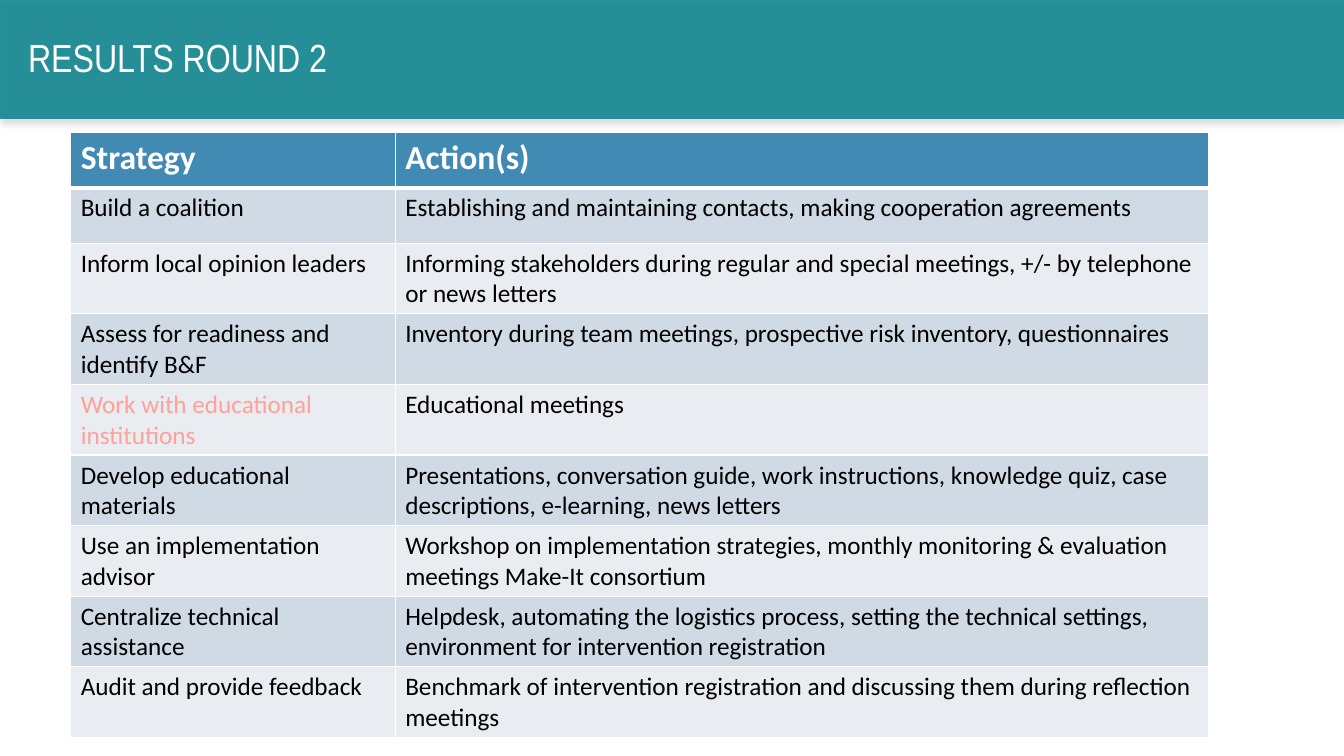
from lxml import etree
from pptx import Presentation
from pptx.dml.color import RGBColor
from pptx.enum.shapes import MSO_SHAPE
from pptx.enum.text import MSO_ANCHOR
from pptx.oxml.ns import qn
from pptx.util import Pt

RECT = MSO_SHAPE.RECTANGLE
MIDDLE = MSO_ANCHOR.MIDDLE

WIDTH, HEIGHT = 960, 540
COLUMNS = [231.8, 581]
HEADER_HEIGHT, ROW_HEIGHT = 39.6, 50.4
HEADER_FILL = "418AB3"
BAND_FILLS = ["CFDAE5", "E9EDF2"]
HIGHLIGHT = "Work with educational institutions"

TITLE_FONT = {"name": "Arial Narrow", "size": Pt(28), "bold": False}
HEADER_FONT = {"name": "Calibri", "size": Pt(24), "bold": True}
BODY_FONT = {"name": "Calibri", "size": Pt(18), "bold": False}

ROWS = [
    ("Strategy", "Action(s)"),
    ("Build a coalition",
     "Establishing and maintaining contacts, making cooperation agreements"),
    ("Inform local opinion leaders",
     "Informing stakeholders during regular and special meetings, +/- by telephone or news letters"),
    ("Assess for readiness and identify B&F",
     "Inventory during team meetings, prospective risk inventory, questionnaires"),
    (HIGHLIGHT, "Educational meetings"),
    ("Develop educational materials",
     "Presentations, conversation guide, work instructions, knowledge quiz, "
     "case descriptions, e-learning, news letters"),
    ("Use an implementation advisor",
     "Workshop on implementation strategies, monthly monitoring & evaluation "
     "meetings Make-It consortium"),
    ("Centralize technical assistance",
     "Helpdesk, automating the logistics process, setting the technical settings, "
     "environment for intervention registration"),
    ("Audit and provide feedback",
     "Benchmark of intervention registration and discussing them during reflection meetings"),
]


def rgb(value):
    return RGBColor.from_string(value)


def add_element(parent, tag, **attrs):
    child = etree.SubElement(parent, qn(tag))
    for name, value in attrs.items():
        child.set(name, str(value))
    return child


def fill_solid(fill, color):
    fill.solid()
    fill.fore_color.rgb = rgb(color)


def write(tf, text, font, color):
    p = tf.paragraphs[0]
    r = p.add_run()
    r.text = text
    for name, value in font.items():
        setattr(r.font, name, value)
    r.font.color.rgb = rgb(color)
    return p


def add_banner(s, height, color):
    sp = s.shapes.add_shape(RECT, 0, 0, Pt(WIDTH), Pt(height))
    fill_solid(sp.fill, color)
    sp.line.fill.background()
    sp.shadow.inherit = False
    spPr = sp.element.spPr
    add_element(spPr.find(qn("a:solidFill"))[0], "a:alpha", val=90000)
    shadow = add_element(spPr.find(qn("a:effectLst")), "a:outerShdw",
                         blurRad=Pt(4), dist=Pt(3), dir=5400000,
                         algn="t", rotWithShape=0)
    shadow_color = add_element(shadow, "a:srgbClr", val="A6A6A6")
    add_element(shadow_color, "a:alpha", val=40000)


def add_title(s, text, left, top, width, height):
    sp = s.shapes.add_textbox(Pt(left), Pt(top), Pt(width), Pt(height))
    tf = sp.text_frame
    tf.word_wrap = True
    tf.vertical_anchor = MIDDLE
    p = write(tf, text, TITLE_FONT, "FFFFFF")
    p.line_spacing = 0.9


def set_borders(cell, widths):
    tcPr = cell._tc.get_or_add_tcPr()
    for side, width in widths.items():
        ln = add_element(tcPr, f"a:ln{side}", w=Pt(width))
        add_element(add_element(ln, "a:solidFill"), "a:srgbClr", val="FFFFFF")


def format_cell(cell, text, row):
    header = row == 0
    widths = {"L": 1, "R": 1, "T": 3 if row == 1 else 1, "B": 3 if header else 1}
    set_borders(cell, widths)
    if header:
        fill, font, color = HEADER_FILL, HEADER_FONT, "FFFFFF"
    else:
        fill, font = BAND_FILLS[(row - 1) % 2], BODY_FONT
        color = "FFA197" if text == HIGHLIGHT else "000000"
    fill_solid(cell.fill, fill)
    write(cell.text_frame, text, font, color)


def add_strategy_table(s, left, top):
    heights = [HEADER_HEIGHT] * 2 + [ROW_HEIGHT] * (len(ROWS) - 2)
    table = s.shapes.add_table(len(ROWS), len(COLUMNS), Pt(left), Pt(top),
                               Pt(sum(COLUMNS)), Pt(sum(heights))).table
    for column, width in zip(table.columns, COLUMNS):
        column.width = Pt(width)
    for row, height in zip(table.rows, heights):
        row.height = Pt(height)
    for i, texts in enumerate(ROWS):
        for j, text in enumerate(texts):
            format_cell(table.cell(i, j), text, i)


def main():
    prs = Presentation()
    prs.slide_width, prs.slide_height = Pt(WIDTH), Pt(HEIGHT)
    s = prs.slides.add_slide(prs.slide_layouts[6])
    add_banner(s, 85, "118690")
    add_title(s, "RESULTS ROUND 2", 13, 9.4, 828, 66.2)
    add_strategy_table(s, 50.5, 94.5)
    prs.save("out.pptx")


if __name__ == "__main__":
    main()
